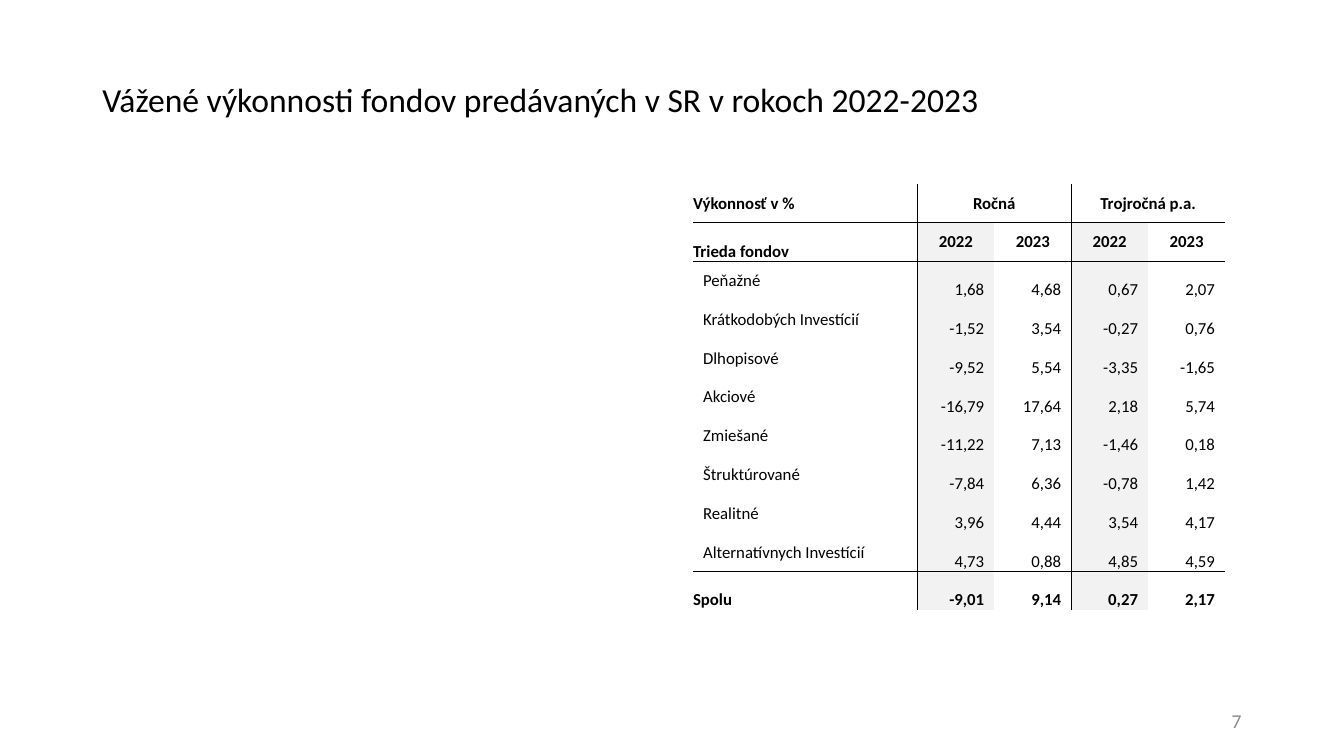
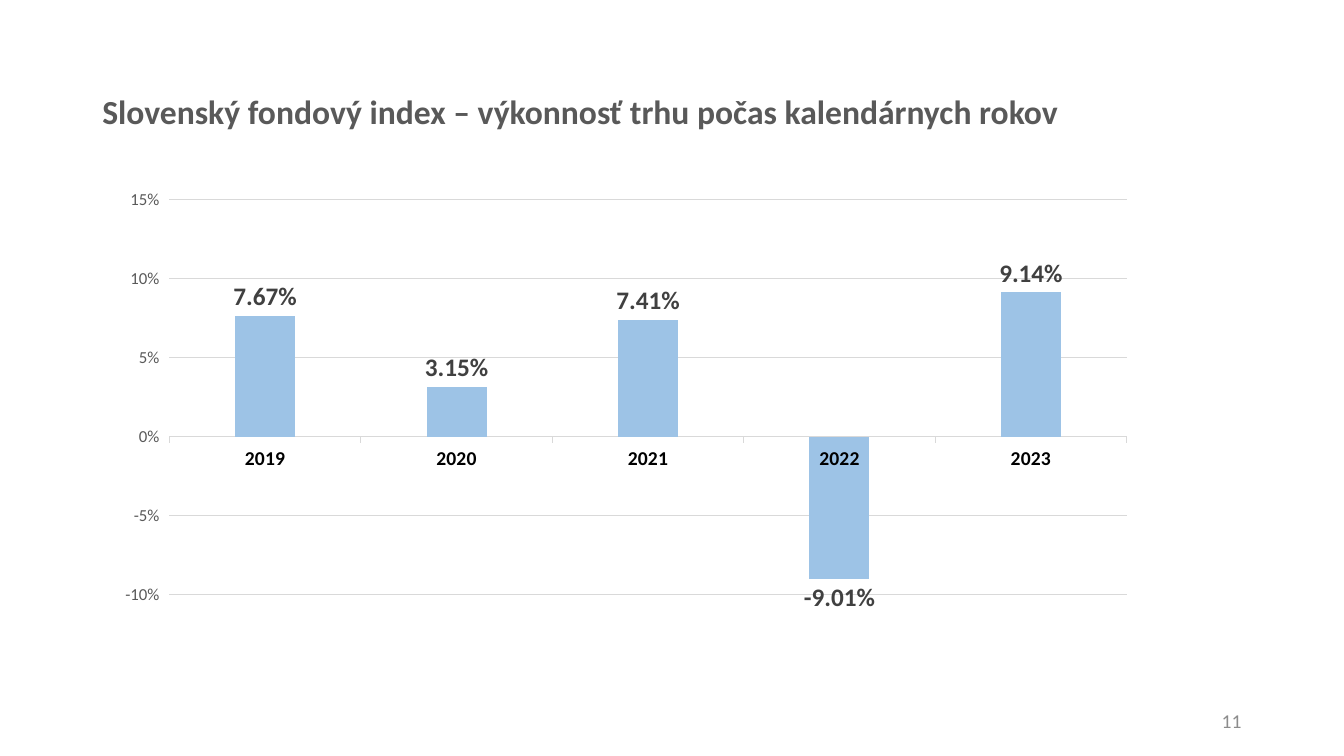
"""Build two slides on Slovak fund performance: a yield table and an index chart."""
from dataclasses import dataclass

from lxml import etree
from pptx import Presentation, util as u
from pptx.chart import data
from pptx.dml import color
from pptx.enum import chart as charts, text
from pptx.oxml import ns

COLUMNS, ROWS = 160, 90
UNIT = u.Inches(7.5) // ROWS
FONT = "Calibri"
COLORS = {
    "ink": "000000",
    "muted": "595959",
    "label": "404040",
    "number": "8C8C8C",
    "rule": "D9D9D9",
    "shade": "F2F2F2",
    "bar": "9DC3E6",
}
LEFT, CENTER, RIGHT = text.PP_ALIGN.LEFT, text.PP_ALIGN.CENTER, text.PP_ALIGN.RIGHT
MIDDLE, BOTTOM = text.MSO_ANCHOR.MIDDLE, text.MSO_ANCHOR.BOTTOM

YEARS = ("2022", "2023") * 2
FUNDS = (
    ("Peňažné", "1,68", "4,68", "0,67", "2,07"),
    ("Krátkodobých Investícií", "-1,52", "3,54", "-0,27", "0,76"),
    ("Dlhopisové", "-9,52", "5,54", "-3,35", "-1,65"),
    ("Akciové", "-16,79", "17,64", "2,18", "5,74"),
    ("Zmiešané", "-11,22", "7,13", "-1,46", "0,18"),
    ("Štruktúrované", "-7,84", "6,36", "-0,78", "1,42"),
    ("Realitné", "3,96", "4,44", "3,54", "4,17"),
    ("Alternatívnych Investícií", "4,73", "0,88", "4,85", "4,59"),
)
YIELDS = (
    ("Výkonnosť v %", "Ročná", "", "Trojročná p.a.", ""),
    ("Trieda fondov", *YEARS),
    *FUNDS,
    ("Spolu", "-9,01", "9,14", "0,27", "2,17"),
)
TOTAL_ROW = len(YIELDS) - 1
SHADED_COLUMNS = (1, 3)
COLUMN_RULES = {1: 0.5, 3: 0.5}
ROW_RULES = {1: 0.5, 2: 1, TOTAL_ROW: 1}
INDEX = {"2019": 0.0767, "2020": 0.0315, "2021": 0.0741, "2022": -0.0901, "2023": 0.0914}


@dataclass(frozen=True)
class Area:
    """A rectangle in columns and rows of the slide grid."""

    left: float
    top: float
    width: float
    height: float

    def emu(self) -> tuple[int, ...]:
        """Return the rectangle in EMU."""
        return tuple(round(n * UNIT) for n in (self.left, self.top, self.width, self.height))


@dataclass(frozen=True)
class Style:
    """The look of one run of text."""

    size: float
    color: str = "ink"
    bold: bool = False

    def apply(self, font) -> None:
        """Set this look on a font."""
        font.name, font.size, font.bold = FONT, u.Pt(self.size), self.bold
        font.color.rgb = rgb(self.color)


@dataclass(frozen=True)
class Placement:
    """The alignment, anchor and side margins of a table cell."""

    align: text.PP_ALIGN
    anchor: text.MSO_ANCHOR
    left: float = 0
    right: float = 0


HEADING = Placement(CENTER, MIDDLE)
CORNER = Placement(LEFT, MIDDLE)
ROW_TITLE = Placement(LEFT, BOTTOM)
FUND = Placement(LEFT, MIDDLE, left=0.1)
FIGURE = Placement(RIGHT, BOTTOM, right=0.1)

NUMBER_AREA = Area(113, 83.4, 36, 4.8)
TABLE_AREA = Area(82.5, 21.9, 63.36, 50.82)
FIRST_COLUMN = 26.72
CHART_AREA = Area(11.9, 20, 127.2, 53.8)
PLOT_SHARES = {"x": 0.065, "y": 0.071, "w": 0.896, "h": 0.873}


def rgb(name: str) -> color.RGBColor:
    """Look up a named colour."""
    return color.RGBColor.from_string(COLORS[name])


def write(paragraph, words: str, style: Style, align=LEFT) -> None:
    """Add one styled run to a paragraph."""
    paragraph.alignment = align
    run = paragraph.add_run()
    run.text = words
    style.apply(run.font)


def add_line(slide, area: Area, words: str, style: Style, align=LEFT, spacing: float = 1) -> None:
    """Place a vertically centred line of text."""
    frame = slide.shapes.add_textbox(*area.emu()).text_frame
    frame.word_wrap = True
    frame.vertical_anchor = MIDDLE
    frame.paragraphs[0].line_spacing = spacing
    write(frame.paragraphs[0], words, style, align)


def open_slide(deck, title: str, area: Area, style: Style, number: int):
    """Add a blank slide with its title and page number."""
    slide = deck.slides.add_slide(deck.slide_layouts[6])
    add_line(slide, area, title, style, spacing=0.9)
    add_line(slide, NUMBER_AREA, str(number), Style(14, "number"), RIGHT)
    return slide


def rule_cell(cell, row: int, column: int) -> None:
    """Draw the borders that the table's rules give a cell."""
    properties = cell._tc.get_or_add_tcPr()
    widths = {
        "L": COLUMN_RULES.get(column),
        "R": COLUMN_RULES.get(column + 1),
        "T": ROW_RULES.get(row),
        "B": ROW_RULES.get(row + 1),
    }
    for side, width in widths.items():
        border = etree.SubElement(properties, ns.qn(f"a:ln{side}"), w=str(u.Pt(width or 0)))
        if width is None:
            etree.SubElement(border, ns.qn("a:noFill"))
        else:
            paint = etree.SubElement(border, ns.qn("a:solidFill"))
            etree.SubElement(paint, ns.qn("a:srgbClr"), val=COLORS["ink"])


def placement_of(row: int, column: int) -> Placement:
    """Choose how a cell's text sits."""
    if column:
        return HEADING if row < 2 else FIGURE
    if row == 0:
        return CORNER
    return ROW_TITLE if row in (1, TOTAL_ROW) else FUND


def fill_cell(cell, words: str, row: int, column: int) -> None:
    """Write, border and shade one cell of the yield table."""
    place = placement_of(row, column)
    cell.margin_left, cell.margin_right = u.Inches(place.left), u.Inches(place.right)
    cell.margin_top = cell.margin_bottom = 0
    cell.vertical_anchor = place.anchor
    rule_cell(cell, row, column)
    if row and column in SHADED_COLUMNS:
        cell.fill.solid()
        cell.fill.fore_color.rgb = rgb("shade")
    else:
        cell.fill.background()
    if words:
        write(cell.text_frame.paragraphs[0], words, Style(12, bold=row in (0, 1, TOTAL_ROW)), place.align)


def add_yields(slide) -> None:
    """Add the table of yearly and three-year yields."""
    count = len(YIELDS[0])
    table = slide.shapes.add_table(len(YIELDS), count, *TABLE_AREA.emu()).table
    table.first_row = table.horz_banding = False
    year_column = (TABLE_AREA.width - FIRST_COLUMN) / (count - 1)
    for index, column in enumerate(table.columns):
        column.width = round((year_column if index else FIRST_COLUMN) * UNIT)
    for row, entries in enumerate(YIELDS):
        for column, words in enumerate(entries):
            fill_cell(table.cell(row, column), words, row, column)
    for column in SHADED_COLUMNS:
        table.cell(0, column).merge(table.cell(0, column + 1))


def fix_plot(chart) -> None:
    """Pin the inner plot area to its shares of the chart."""
    plot_area = chart.element.find(".//" + ns.qn("c:plotArea"))
    layout = plot_area.find(ns.qn("c:layout"))
    if layout is None:
        layout = etree.Element(ns.qn("c:layout"))
        plot_area.insert(0, layout)
    manual = etree.SubElement(layout, ns.qn("c:manualLayout"))
    settings = {"layoutTarget": "inner", "xMode": "edge", "yMode": "edge", **PLOT_SHARES}
    for tag, value in settings.items():
        etree.SubElement(manual, ns.qn(f"c:{tag}"), val=str(value))


def style_axes(chart) -> None:
    """Set the scale, labels and lines of both axes."""
    years, returns = chart.category_axis, chart.value_axis
    Style(14, bold=True).apply(years.tick_labels.font)
    Style(12, "muted").apply(returns.tick_labels.font)
    returns.minimum_scale, returns.maximum_scale, returns.major_unit = -0.1, 0.15, 0.05
    returns.tick_labels.number_format = "0%"
    returns.tick_labels.number_format_is_linked = False
    returns.has_major_gridlines = True
    returns.format.line.fill.background()
    for line in (years.format.line, returns.major_gridlines.format.line):
        line.color.rgb = rgb("rule")
        line.width = u.Pt(0.75)
    for axis in (years, returns):
        axis.major_tick_mark = charts.XL_TICK_MARK.OUTSIDE


def add_index(slide) -> None:
    """Add the column chart of the fund index by calendar year."""
    figures = data.CategoryChartData(number_format="0.00%")
    figures.categories = list(INDEX)
    figures.add_series("Series 1", list(INDEX.values()))
    chart = slide.shapes.add_chart(
        charts.XL_CHART_TYPE.COLUMN_CLUSTERED, *CHART_AREA.emu(), figures
    ).chart
    chart.has_title = chart.has_legend = False
    Style(10).apply(chart.font)
    plot = chart.plots[0]
    plot.gap_width, plot.overlap, plot.vary_by_categories = 219, -27, False
    bars = plot.series[0]
    bars.invert_if_negative = False
    bars.format.fill.solid()
    bars.format.fill.fore_color.rgb = rgb("bar")
    labels = bars.data_labels
    labels.show_value = True
    labels.number_format, labels.number_format_is_linked = "0.00%", False
    labels.position = charts.XL_LABEL_POSITION.OUTSIDE_END
    Style(18, "label", True).apply(labels.font)
    style_axes(chart)
    fix_plot(chart)


def main() -> None:
    """Build and save the deck."""
    deck = Presentation()
    deck.slide_width, deck.slide_height = COLUMNS * UNIT, ROWS * UNIT
    add_yields(open_slide(
        deck, "Vážené výkonnosti fondov predávaných v SR v rokoch 2022-2023",
        Area(11, 4.9, 138, 14.3), Style(24), 7,
    ))
    add_index(open_slide(
        deck, "Slovenský fondový index – výkonnosť trhu počas kalendárnych rokov",
        Area(11, 4.8, 143.3, 17.4), Style(24, "muted", True), 11,
    ))
    deck.save("out.pptx")


if __name__ == "__main__":
    main()
